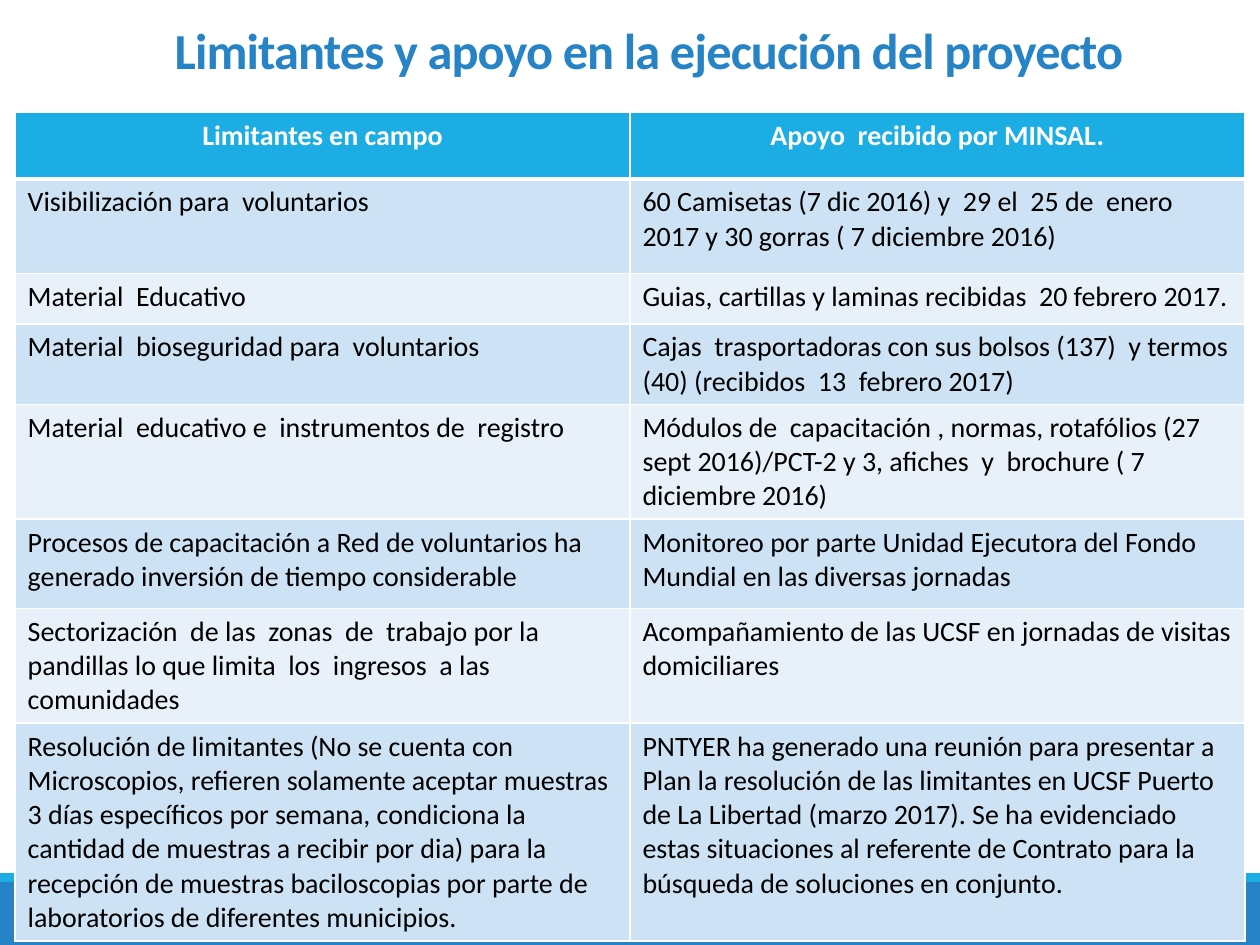
from lxml import etree
from pptx import Presentation, util as u
from pptx.dml.color import RGBColor
from pptx.enum import shapes, text
from pptx.oxml.ns import qn

THEME = {
    "font": "Calibri", "title_size": 28.8, "cell_size": 16,
    "blue": "2683C6", "cyan": "1CADE4", "white": "FFFFFF", "black": "000000",
    "bands": ("CDE3F5", "E8F1FA"),
}
WIDTH, HEIGHT = u.Inches(10), u.Inches(7.5)


def write(paragraph, words, **formats):
    """Add one run and apply the font values given."""
    run = paragraph.add_run()
    run.text = words
    run.font.name = THEME["font"]
    run.font.color.rgb = RGBColor.from_string(formats.pop("color"))
    for name, value in formats.items():
        setattr(run.font, name, value)
    return run


def add_border(cell, side, points):
    line = etree.SubElement(cell._tc.get_or_add_tcPr(), qn(f"a:ln{side}"),
                            w=str(u.Pt(points)))
    fill = etree.SubElement(line, qn("a:solidFill"))
    etree.SubElement(fill, qn("a:srgbClr"), val=THEME["white"])


presentation = Presentation()
presentation.slide_width, presentation.slide_height = WIDTH, HEIGHT
slide = presentation.slides.add_slide(presentation.slide_layouts[6])

# Footer bands: top and height in inches
for top, height, color in ((7, 0.5, "blue"), (6.93, 0.07, "cyan")):
    band = slide.shapes.add_shape(shapes.MSO_SHAPE.RECTANGLE, 0, u.Inches(top),
                                  WIDTH, u.Inches(height))
    band.shadow.inherit = False
    band.fill.solid()
    band.fill.fore_color.rgb = RGBColor.from_string(THEME[color])
    band.line.fill.background()

# Title
title = slide.shapes.add_textbox(u.Inches(0.9), u.Inches(0.13), u.Inches(8.5), u.Inches(0.55))
frame = title.text_frame
for name, value in {"word_wrap": True, "vertical_anchor": text.MSO_ANCHOR.BOTTOM}.items():
    setattr(frame, name, value)
paragraph = frame.paragraphs[0]
paragraph.alignment = text.PP_ALIGN.CENTER
paragraph.line_spacing = 0.85
run = write(paragraph, "Limitantes y apoyo en la ejecución del proyecto",
            color=THEME["blue"], size=u.Pt(THEME["title_size"]), bold=True)
run._r.get_or_add_rPr().set("spc", "-50")

# Table rows: height in inches, limitation, support
ROWS = [
    (0.53, "Limitantes en campo", "Apoyo  recibido por MINSAL."),
    (0.75, "Visibilización para  voluntarios",
     "60 Camisetas (7 dic 2016) y  29 el  25 de  enero 2017 y 30 gorras ( 7 diciembre 2016)"),
    (0.4, "Material  Educativo", "Guias, cartillas y laminas recibidas  20 febrero 2017."),
    (0.64, "Material  bioseguridad para  voluntarios",
     "Cajas  trasportadoras con sus bolsos (137)  y termos (40) (recibidos  13  febrero 2017)"),
    (0.91, "Material  educativo e  instrumentos de  registro",
     "Módulos de  capacitación , normas, rotafólios (27 sept 2016)/PCT-2 y 3, afiches  y  "
     "brochure ( 7 diciembre 2016)"),
    (0.71, "Procesos de capacitación a Red de voluntarios ha generado inversión de tiempo "
     "considerable",
     "Monitoreo por parte Unidad Ejecutora del Fondo Mundial en las diversas jornadas"),
    (0.91, "Sectorización  de las  zonas  de  trabajo por la  pandillas lo que limita  los  "
     "ingresos  a las comunidades",
     "Acompañamiento de las UCSF en jornadas de visitas domiciliares"),
    (1.73, "Resolución de limitantes (No se cuenta con Microscopios, refieren solamente aceptar "
     "muestras 3 días específicos por semana, condiciona la cantidad de muestras a recibir por "
     "dia) para la recepción de muestras baciloscopias por parte de laboratorios de diferentes "
     "municipios.",
     "PNTYER ha generado una reunión para presentar a Plan la resolución de las limitantes en "
     "UCSF Puerto de La Libertad (marzo 2017). Se ha evidenciado estas situaciones al referente "
     "de Contrato para la búsqueda de soluciones en conjunto."),
]
margin = u.Inches(0.12)
table = slide.shapes.add_table(len(ROWS), 2, margin, u.Inches(0.89), WIDTH - 2 * margin,
                               u.Inches(sum(row[0] for row in ROWS))).table

for index, (height, *entries) in enumerate(ROWS):
    table.rows[index].height = u.Inches(height)
    header = index == 0
    fill = THEME["cyan"] if header else THEME["bands"][(index - 1) % 2]
    # A thick rule parts the header from the body
    borders = {"L": 1, "R": 1, "T": 3 if index == 1 else 1, "B": 3 if header else 1}
    for column, words in enumerate(entries):
        cell = table.cell(index, column)
        for side, points in borders.items():
            add_border(cell, side, points)
        cell.fill.solid()
        cell.fill.fore_color.rgb = RGBColor.from_string(fill)
        paragraph = cell.text_frame.paragraphs[0]
        paragraph.alignment = text.PP_ALIGN.CENTER if header else text.PP_ALIGN.LEFT
        write(paragraph, words, color=THEME["white" if header else "black"],
              size=u.Pt(THEME["cell_size"]), bold=header)

presentation.save("out.pptx")
